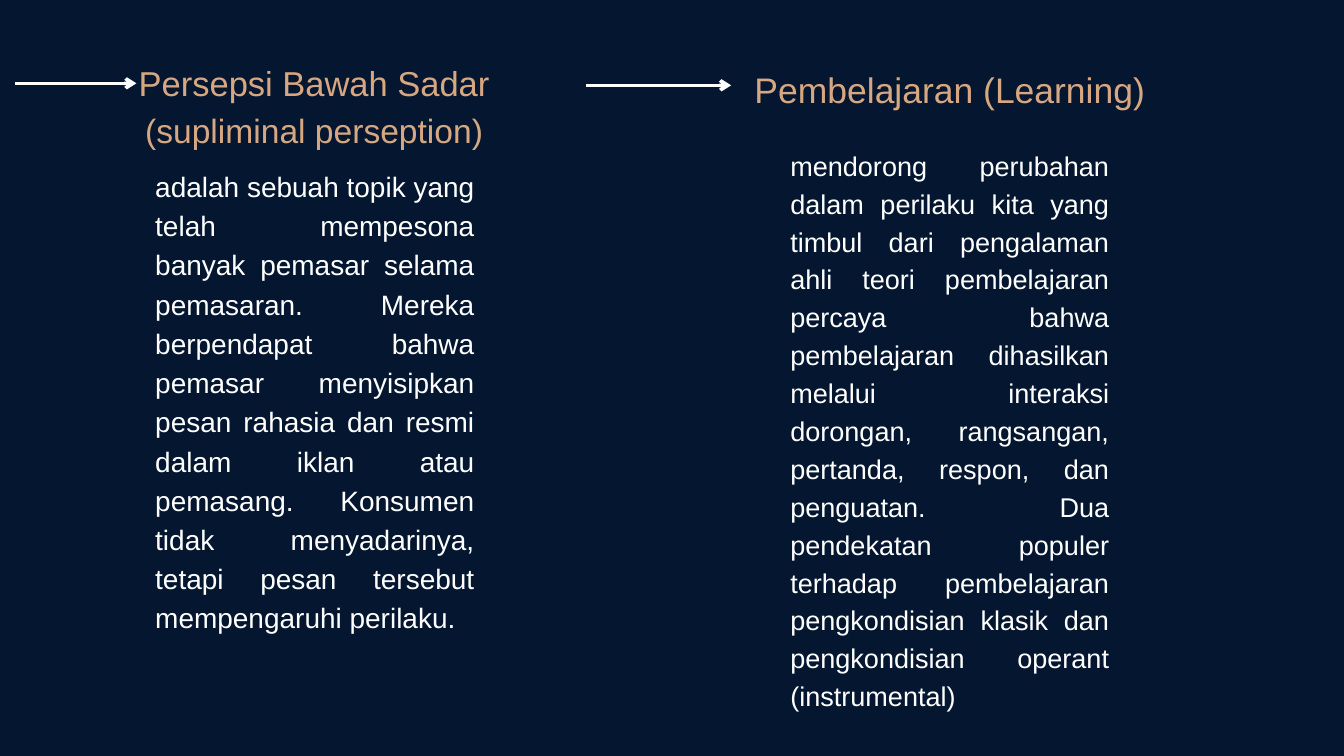
from dataclasses import dataclass

from lxml.etree import SubElement
from pptx import Presentation
from pptx.dml.color import RGBColor
from pptx.enum.shapes import MSO_CONNECTOR
from pptx.enum.text import MSO_AUTO_SIZE, PP_ALIGN
from pptx.oxml.ns import qn
from pptx.util import Inches, Pt


@dataclass(frozen=True)
class Theme:
    font: str = "Arial"
    background: RGBColor = RGBColor(0x05, 0x17, 0x30)
    heading: RGBColor = RGBColor(0xD6, 0xA7, 0x81)
    body: RGBColor = RGBColor(0xFF, 0xFF, 0xFF)
    arrow: RGBColor = RGBColor(0xFF, 0xFF, 0xFF)
    arrow_width: float = 3.75
    leading: float = 1.4
    perception_title: int = 37
    perception_subtitle: int = 36
    perception_body: int = 30
    learning_title: int = 38
    learning_body: int = 29


THEME = Theme()

PERCEPTION = (
    "adalah sebuah topik yang telah mempesona banyak pemasar selama pemasaran. "
    "Mereka berpendapat bahwa pemasar menyisipkan pesan rahasia dan resmi dalam "
    "iklan atau pemasang. Konsumen tidak menyadarinya, tetapi pesan tersebut "
    "mempengaruhi perilaku."
)
LEARNING = (
    "mendorong perubahan dalam perilaku kita yang timbul dari pengalaman ahli "
    "teori pembelajaran percaya bahwa pembelajaran dihasilkan melalui interaksi "
    "dorongan, rangsangan, pertanda, respon, dan penguatan. Dua pendekatan "
    "populer terhadap pembelajaran pengkondisian klasik dan pengkondisian "
    "operant (instrumental)"
)


def add_text(s, box, lines, color, align):
    sp = s.shapes.add_textbox(*map(Inches, box))
    tf = sp.text_frame
    tf.word_wrap = True
    tf.auto_size = MSO_AUTO_SIZE.SHAPE_TO_FIT_TEXT
    tf.margin_left = tf.margin_top = tf.margin_right = tf.margin_bottom = 0
    for i, (text, size) in enumerate(lines):
        p = tf.add_paragraph() if i else tf.paragraphs[0]
        p.alignment = align
        p.line_spacing = Pt(size * THEME.leading)
        r = p.add_run()
        r.text = text
        r.font.name = THEME.font
        r.font.size = Pt(size)
        r.font.color.rgb = color


def add_heading(s, box, *lines):
    add_text(s, box, lines, THEME.heading, PP_ALIGN.CENTER)


def add_body(s, box, text, size):
    add_text(s, box, [(text, size)], THEME.body, PP_ALIGN.JUSTIFY)


def add_arrow(s, left, right, y):
    sp = s.shapes.add_connector(
        MSO_CONNECTOR.STRAIGHT, Inches(left), Inches(y), Inches(right), Inches(y)
    )
    sp.line.color.rgb = THEME.arrow
    sp.line.width = Pt(THEME.arrow_width)
    SubElement(sp.line._get_or_add_ln(), qn("a:tailEnd"), type="arrow")
    SubElement(sp._element.spPr, qn("a:effectLst"))


def main():
    prs = Presentation()
    prs.slide_width, prs.slide_height = Inches(20), Inches(11.25)
    s = prs.slides.add_slide(prs.slide_layouts[6])
    s.background.fill.solid()
    s.background.fill.fore_color.rgb = THEME.background

    add_body(s, (2.31, 2.44, 4.75, 6.99), PERCEPTION, THEME.perception_body)
    add_body(s, (11.76, 2.14, 4.75, 8.42), LEARNING, THEME.learning_body)
    add_heading(
        s,
        (-0.86, 0.82, 11.07, 1.39),
        ("Persepsi Bawah Sadar", THEME.perception_title),
        ("(supliminal perseption)", THEME.perception_subtitle),
    )
    add_heading(
        s,
        (10.88, 0.9, 6.51, 0.71),
        ("Pembelajaran (Learning)", THEME.learning_title),
    )
    add_arrow(s, 0.22, 2.03, 1.24)
    add_arrow(s, 8.72, 10.88, 1.27)

    prs.save("out.pptx")


if __name__ == "__main__":
    main()
